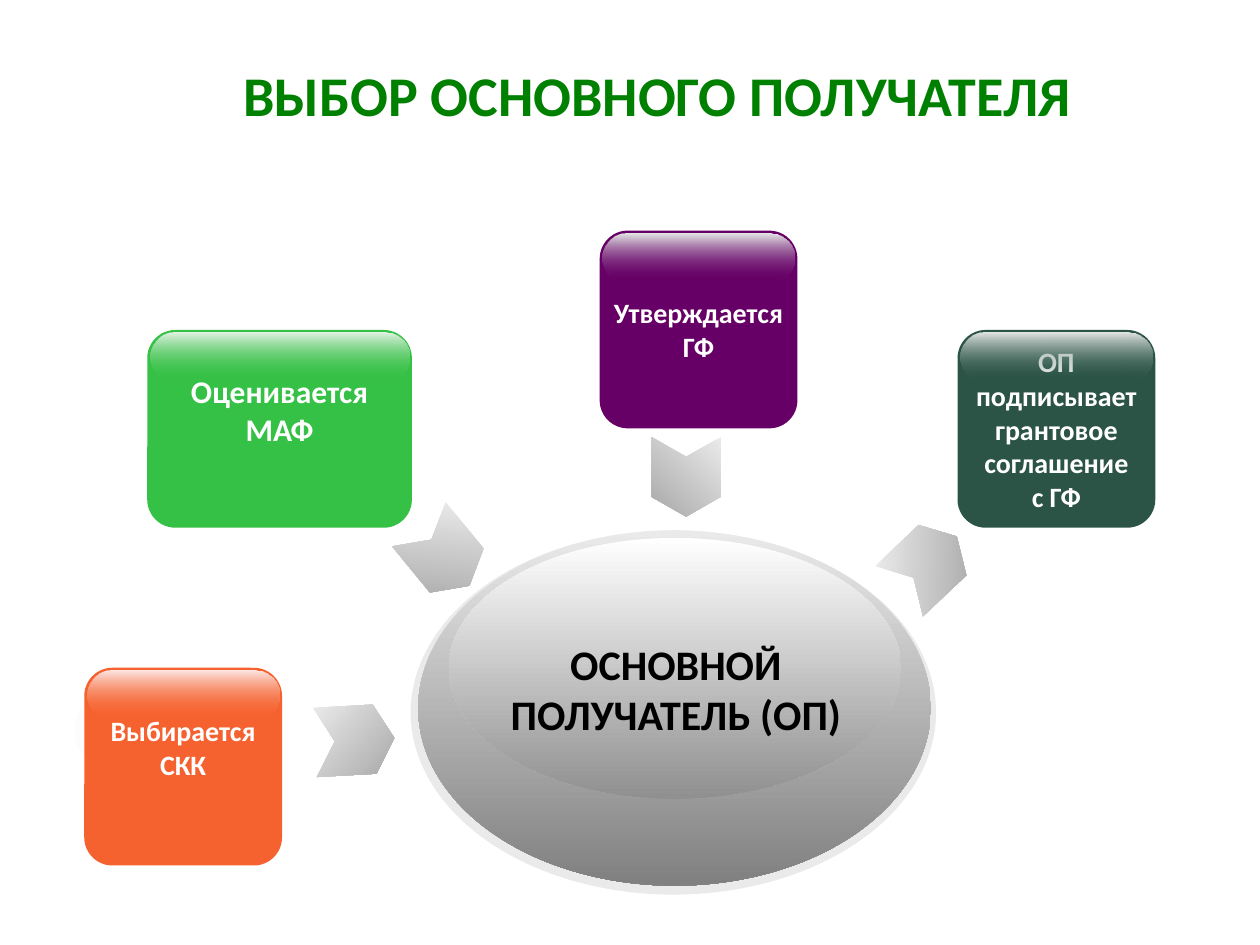
from lxml.etree import SubElement
from pptx import Presentation
from pptx.dml.color import RGBColor
from pptx.enum.shapes import MSO_SHAPE
from pptx.enum.text import MSO_ANCHOR, PP_ALIGN
from pptx.oxml.ns import qn
from pptx.util import Pt


def color(value):
    return RGBColor.from_string(value)


class SlideBuilder:
    font = "Calibri"
    silver = "EAEAEA"
    white = "FFFFFF"

    def __init__(self, slide):
        self.slide = slide

    def shape(self, kind, left, top, width, height):
        shape = self.slide.shapes.add_shape(kind, Pt(left), Pt(top), Pt(width), Pt(height))
        shape.shadow.inherit = False
        shape.line.fill.background()
        return shape

    def fill(self, shape, value):
        shape.fill.solid()
        shape.fill.fore_color.rgb = color(value)

    def gradient(self, shape, start, end, angle=90, opacities=(100, 100)):
        """Fill from start to end; the angle runs clockwise, opacities are percentages."""
        shape.fill.gradient()
        shape.fill.gradient_angle = 360 - angle
        for stop, value in zip(shape.fill.gradient_stops, (start, end)):
            stop.color.rgb = color(value)
        for element, opacity in zip(shape._element.spPr.iter(qn("a:srgbClr")), opacities):
            if opacity < 100:
                SubElement(element, qn("a:alpha"), val=str(opacity * 1000))

    def label(self, shape, text, size, value, align=PP_ALIGN.CENTER, space_below=0):
        frame = shape.text_frame
        frame.text = text
        frame.word_wrap = False
        frame.vertical_anchor = MSO_ANCHOR.MIDDLE
        frame.margin_bottom = Pt(3.6 + space_below)
        for paragraph in frame.paragraphs:
            paragraph.alignment = align
            for run in paragraph.runs:
                run.font.name = self.font
                run.font.size = Pt(size)
                run.font.bold = True
                run.font.color.rgb = color(value)

    def text(self, text, left, top, width, height, size, value, **layout):
        box = self.slide.shapes.add_textbox(Pt(left), Pt(top), Pt(width), Pt(height))
        self.label(box, text, size, value, **layout)

    def ellipse(self, left, top, width, height, start, end, **options):
        shape = self.shape(MSO_SHAPE.OVAL, left, top, width, height)
        self.gradient(shape, start, end, **options)

    def chevron(self, left, top, rotation):
        shape = self.shape(MSO_SHAPE.CHEVRON, left, top, 45.4, 39.6)
        shape.adjustments[0] = 0.285
        shape.rotation = rotation
        self.gradient(shape, self.silver, "A8A8A8", angle=45)

    def tile(self, text, left, top, value, shine, width=113, size=16, space_below=0):
        body = self.shape(MSO_SHAPE.ROUNDED_RECTANGLE, left, top, width, 113)
        body.adjustments[0] = 0.142
        self.fill(body, value)
        self.label(body, text, size, self.white, space_below=space_below)
        inset = 1.6
        gloss = self.shape(MSO_SHAPE.ROUNDED_RECTANGLE, left + inset, top + inset,
                           width - 2 * inset, 27.4)
        gloss.adjustments[0] = 0.5
        self.gradient(gloss, shine, value, opacities=(100, 0))


def main():
    presentation = Presentation()
    presentation.slide_width, presentation.slide_height = Pt(720), Pt(540)
    builder = SlideBuilder(presentation.slides.add_slide(presentation.slide_layouts[6]))

    # Title
    builder.text("ВЫБОР ОСНОВНОГО ПОЛУЧАТЕЛЯ", 131.8, 30.2, 588.2, 86.4, 32, "008000",
                 align=PP_ALIGN.LEFT, space_below=39)

    # Soft glow behind the first step
    builder.ellipse(42.5, 384.5, 96.5, 65.5, builder.white, builder.silver, opacities=(42, 0))

    # Arrows between the steps and the recipient
    for left, top, rotation in [(180, 403.2, 356.8), (369.4, 252.7, 90),
                                (231.1, 297.4, 50.6), (507.6, 302.4, 316.5)]:
        builder.chevron(left, top, rotation)

    # Principal recipient
    rim = builder.shape(MSO_SHAPE.OVAL, 234.7, 303.1, 300.2, 208.1)
    builder.fill(rim, builder.silver)
    builder.ellipse(239, 303.1, 293, 203, builder.silver, "808080")
    builder.ellipse(256.3, 307.4, 258.5, 149, builder.white, "909090")
    builder.text("ОСНОВНОЙ\nПОЛУЧАТЕЛЬ (ОП)", 266, 360.7, 240.5, 65.5, 24, "000000")

    # Steps
    builder.tile("Выбирается\nСКК", 48.2, 381.6, "F6622F", "FDE8E5", space_below=22)
    builder.tile("ОП\nподписывает\nгрантовое\nсоглашение\nс ГФ", 547.2, 188.6,
                 "2B5446", "E5E7E6")
    builder.tile("Оценивается\nМАФ", 84.2, 188.6, "35C145", "E5F3E6",
                 width=151.2, size=18, space_below=22)
    builder.tile("Утверждается\nГФ", 342.7, 131.8, "660066", "E6EAE8")

    presentation.save("out.pptx")


if __name__ == "__main__":
    main()
